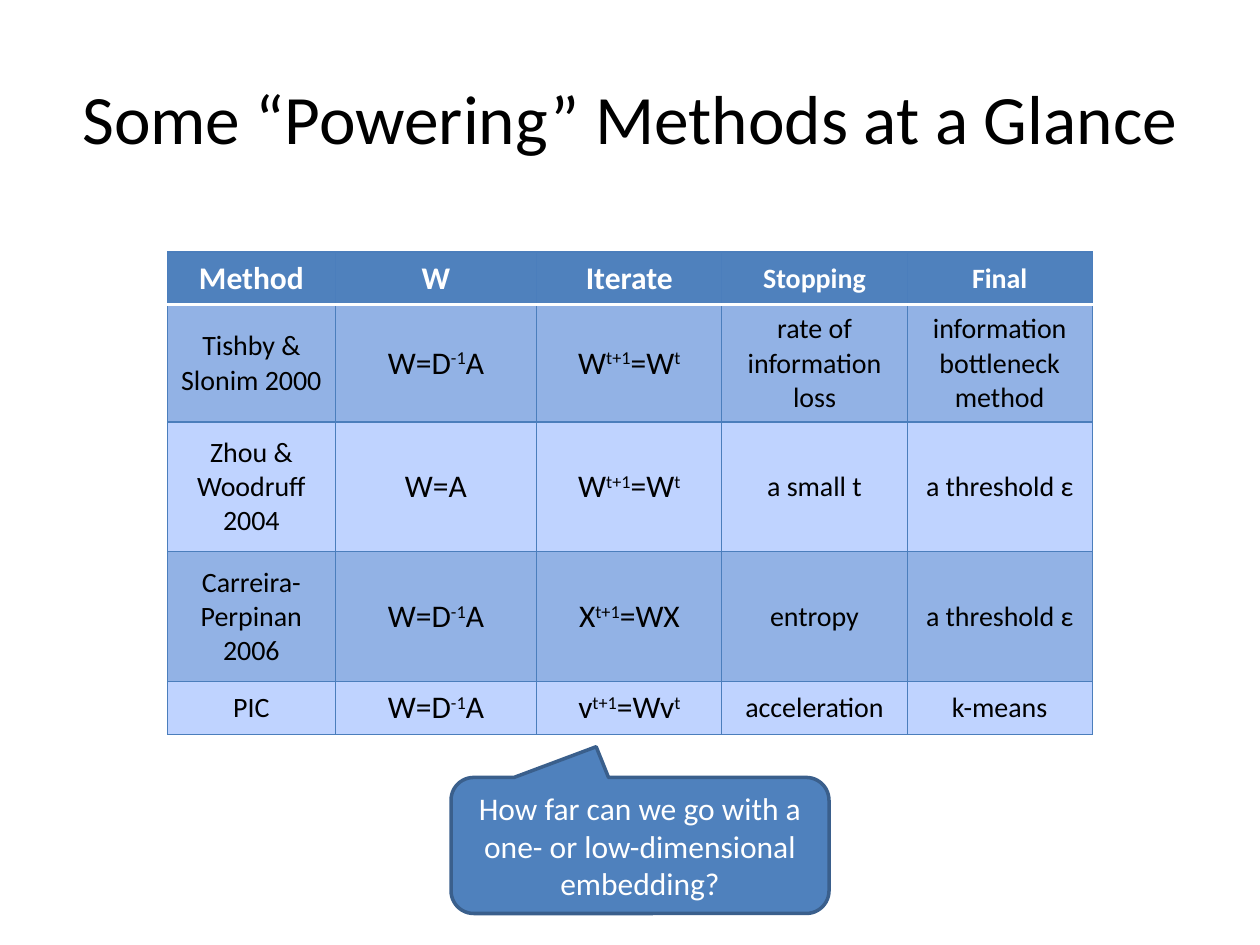
from dataclasses import dataclass

from lxml.etree import SubElement
from pptx import Presentation
from pptx.dml.color import RGBColor as Color
from pptx.enum.shapes import MSO_SHAPE as Shape
from pptx.enum.text import MSO_ANCHOR as Anchor, PP_ALIGN as Align
from pptx.oxml.ns import qn
from pptx.util import Inches, Pt

TITLE = "Some “Powering” Methods at a Glance"
QUESTION = "How far can we go with a one- or low-dimensional embedding?"
HEADER = ["Method", "W", "Iterate", "Stopping", "Final"]
METHODS = [
    ["Tishby & Slonim 2000", "W=D^-1^A", "W^t+1^=W^t", "rate of information loss", "information bottleneck method"],
    ["Zhou & Woodruff 2004", "W=A", "W^t+1^=W^t", "a small t", "a threshold ε"],
    ["Carreira-Perpinan 2006", "W=D^-1^A", "X^t+1^=WX", "entropy", "a threshold ε"],
    ["PIC", "W=D^-1^A", "v^t+1^=Wv^t", "acceleration", "k-means"],
]
COLUMN_WIDTHS = [1.33, 1.6, 1.47, 1.47, 1.47]
ROW_HEIGHTS = [0.42, 0.93, 1.03, 1.03, 0.42]
HEADER_SIZES = [18, 18, 18, 16, 16]
BODY_SIZES = [16, 18, 18, 16, 16]


@dataclass(frozen=True)
class Theme:
    font: str = "Calibri"
    title_size: float = 39.6
    callout_size: float = 18
    dark: str = "000000"
    light: str = "FFFFFF"
    accent: str = "4F81BD"
    outline: str = "3A5F8C"
    grid: str = "4B7EBC"
    bands: tuple = ("BFD3FF", "92B2E5")


THEME = Theme()


def write(frame, text, size, color, bold=False):
    paragraph = frame.paragraphs[0]
    paragraph.alignment = Align.CENTER
    font = paragraph.font
    font.name, font.size, font.bold = THEME.font, Pt(size), bold
    font.color.rgb = Color.from_string(color)
    for index, part in enumerate(text.split("^")):
        if part:
            run = paragraph.add_run()
            run.text = part
            if index % 2:
                run.font._element.set("baseline", "30000")


def set_borders(cell, top, bottom):
    properties = cell._tc.get_or_add_tcPr()
    grid = (THEME.grid, 0.75)
    sides = {"a:lnL": grid, "a:lnR": grid, "a:lnT": top, "a:lnB": bottom}
    for tag, (color, width) in sides.items():
        line = SubElement(properties, qn(tag), w=str(Pt(width)))
        fill = SubElement(line, qn("a:solidFill"))
        SubElement(fill, qn("a:srgbClr"), val=color)


def add_title(slide):
    title = slide.shapes.title
    title.left, title.top, title.width, title.height = map(Inches, (0.5, 0.3, 9, 1.25))
    title.text_frame.vertical_anchor = Anchor.MIDDLE
    write(title.text_frame, TITLE, THEME.title_size, THEME.dark)


def add_methods(slide):
    rows = [HEADER, *METHODS]
    frame = slide.shapes.add_table(
        len(rows), len(HEADER), Inches(1.33), Inches(2),
        Inches(sum(COLUMN_WIDTHS)), Inches(sum(ROW_HEIGHTS)))
    table = frame.table
    for column, width in zip(table.columns, COLUMN_WIDTHS):
        column.width = Inches(width)
    for row, height in zip(table.rows, ROW_HEIGHTS):
        row.height = Inches(height)

    grid, divider = (THEME.grid, 0.75), (THEME.light, 2)
    for r, texts in enumerate(rows):
        is_header = r == 0
        sizes = HEADER_SIZES if is_header else BODY_SIZES
        background = THEME.accent if is_header else THEME.bands[r % 2]
        color = THEME.light if is_header else THEME.dark
        for c, text in enumerate(texts):
            cell = table.cell(r, c)
            cell.vertical_anchor = Anchor.MIDDLE
            set_borders(cell, divider if r == 1 else grid, divider if is_header else grid)
            cell.fill.solid()
            cell.fill.fore_color.rgb = Color.from_string(background)
            write(cell.text_frame, text, sizes[c], color, bold=is_header)


def add_callout(slide):
    callout = slide.shapes.add_shape(
        Shape.ROUNDED_RECTANGULAR_CALLOUT, *map(Inches, (3.58, 6.17, 3, 1.08)))
    for index, value in enumerate((-0.116, -0.726, 0.167)):
        callout.adjustments[index] = value
    callout.shadow.inherit = False
    callout.fill.solid()
    callout.fill.fore_color.rgb = Color.from_string(THEME.accent)
    callout.line.color.rgb = Color.from_string(THEME.outline)
    callout.line.width = Pt(2)
    callout.text_frame.word_wrap = True
    callout.text_frame.vertical_anchor = Anchor.MIDDLE
    write(callout.text_frame, QUESTION, THEME.callout_size, THEME.light)


def main():
    presentation = Presentation()
    presentation.slide_width, presentation.slide_height = Inches(10), Inches(7.5)
    slide = presentation.slides.add_slide(presentation.slide_layouts.get_by_name("Title Only"))
    add_title(slide)
    add_methods(slide)
    add_callout(slide)
    presentation.save("out.pptx")


if __name__ == "__main__":
    main()
